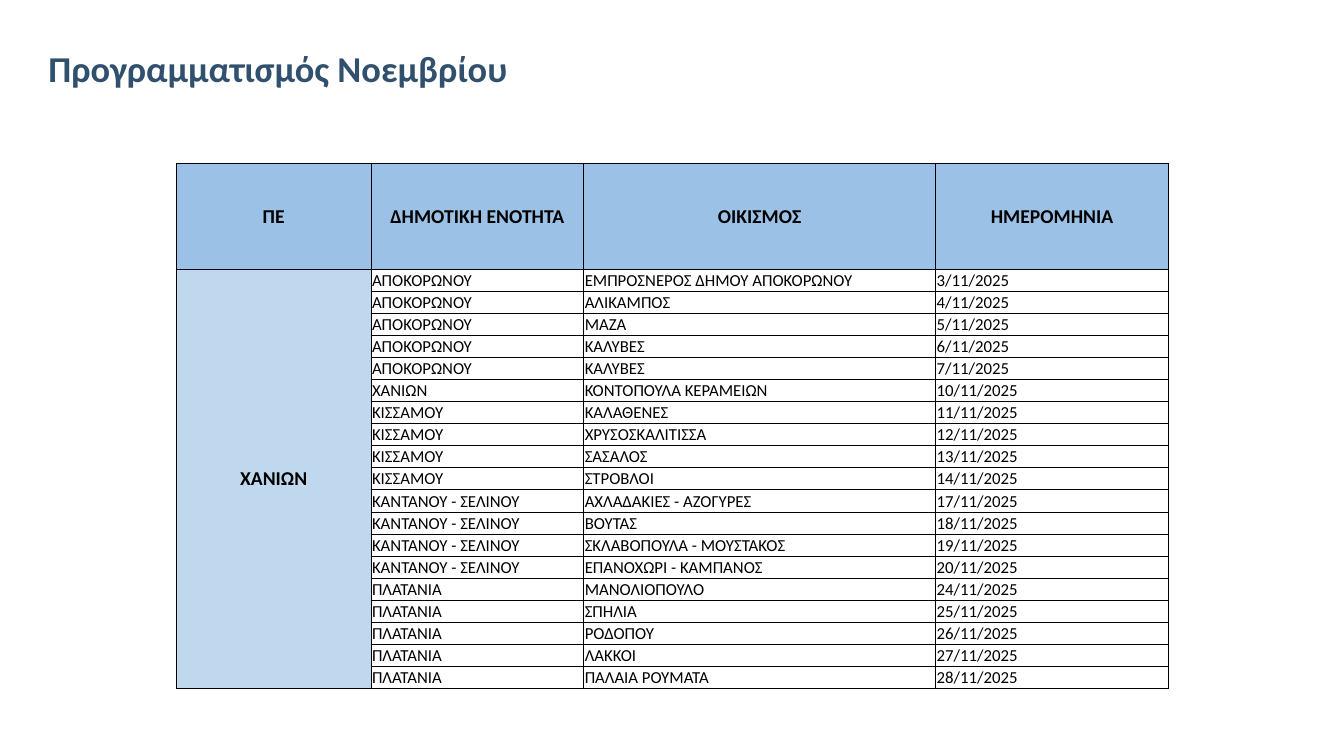
from lxml import etree
from pptx import Presentation
from pptx import util as u
from pptx.dml.color import RGBColor
from pptx.enum import text
from pptx.oxml import ns

TITLE = "Προγραμματισμός Νοεμβρίου"
HEADERS = ("ΠΕ", "ΔΗΜΟΤΙΚΗ ΕΝΟΤΗΤΑ", "ΟΙΚΙΣΜΟΣ", "ΗΜΕΡΟΜΗΝΙΑ")
REGION = "ΧΑΝΙΩΝ"
VISITS = {
    "ΑΠΟΚΟΡΩΝΟΥ": (
        ("ΕΜΠΡΟΣΝΕΡΟΣ ΔΗΜΟΥ ΑΠΟΚΟΡΩΝΟΥ", 3),
        ("ΑΛΙΚΑΜΠΟΣ", 4),
        ("ΜΑΖΑ", 5),
        ("ΚΑΛΥΒΕΣ", 6),
        ("ΚΑΛΥΒΕΣ", 7),
    ),
    "ΧΑΝΙΩΝ": (("ΚΟΝΤΟΠΟΥΛΑ ΚΕΡΑΜΕΙΩΝ", 10),),
    "ΚΙΣΣΑΜΟΥ": (
        ("ΚΑΛΑΘΕΝΕΣ", 11),
        ("ΧΡΥΣΟΣΚΑΛΙΤΙΣΣΑ", 12),
        ("ΣΑΣΑΛΟΣ", 13),
        ("ΣΤΡΟΒΛΟΙ", 14),
    ),
    "ΚΑΝΤΑΝΟΥ - ΣΕΛΙΝΟΥ": (
        ("ΑΧΛΑΔΑΚΙΕΣ - ΑΖΟΓΥΡΕΣ", 17),
        ("ΒΟΥΤΑΣ", 18),
        ("ΣΚΛΑΒΟΠΟΥΛΑ - ΜΟΥΣΤΑΚΟΣ", 19),
        ("ΕΠΑΝΟΧΩΡΙ - ΚΑΜΠΑΝΟΣ", 20),
    ),
    "ΠΛΑΤΑΝΙΑ": (
        ("ΜΑΝΟΛΙΟΠΟΥΛΟ", 24),
        ("ΣΠΗΛΙΑ", 25),
        ("ΡΟΔΟΠΟΥ", 26),
        ("ΛΑΚΚΟΙ", 27),
        ("ΠΑΛΑΙΑ ΡΟΥΜΑΤΑ", 28),
    ),
}

FONT = "Calibri"
BLACK = RGBColor(0x00, 0x00, 0x00)
NAVY = RGBColor(0x31, 0x50, 0x6D)
HEADER_BLUE = RGBColor(0x9B, 0xC2, 0xE6)
REGION_BLUE = RGBColor(0xC0, 0xD8, 0xED)

COLUMNS = (1.93, 2.11, 3.49, 2.31)
TABLE_LEFT, TABLE_TOP, TABLE_HEIGHT = 1.75, 1.62, 5.21
HEADER_HEIGHT = 1.05


def style_font(p, size, color, bold):
    p.font.name = FONT
    p.font.size = u.Pt(size)
    p.font.bold = bold
    p.font.color.rgb = color


def add_borders(cell):
    tc_pr = cell._tc.get_or_add_tcPr()
    for side in ("lnL", "lnR", "lnT", "lnB"):
        ln = etree.SubElement(tc_pr, ns.qn(f"a:{side}"), w=str(u.Pt(0.5)))
        fill = etree.SubElement(ln, ns.qn("a:solidFill"))
        etree.SubElement(fill, ns.qn("a:srgbClr"), val=str(BLACK))


def style_cell(cell, value, fill):
    add_borders(cell)
    cell.vertical_anchor = text.MSO_ANCHOR.MIDDLE
    cell.margin_left = cell.margin_right = cell.margin_top = u.Inches(0.01)
    cell.margin_bottom = 0
    if fill is None:
        cell.fill.background()
    else:
        cell.fill.solid()
        cell.fill.fore_color.rgb = fill
    cell.text = value
    p = cell.text_frame.paragraphs[0]
    p.alignment = text.PP_ALIGN.CENTER if fill else text.PP_ALIGN.LEFT
    style_font(p, 14 if fill else 12, BLACK, fill is not None)


def add_title(slide):
    box = slide.shapes.add_textbox(*map(u.Inches, (0.36, 0.25, 12.4, 0.7)))
    tf = box.text_frame
    tf.word_wrap = True
    tf.vertical_anchor = text.MSO_ANCHOR.BOTTOM
    tf.margin_left = u.Inches(0.12)
    p = tf.paragraphs[0]
    p.text = TITLE
    p.line_spacing = 0.9
    style_font(p, 26, NAVY, True)


def add_schedule(slide):
    visits = [(unit, place, f"{day}/11/2025")
              for unit, stops in VISITS.items() for place, day in stops]
    rows = [HEADERS] + [(REGION if i == 0 else "", *visit)
                        for i, visit in enumerate(visits)]
    frame = slide.shapes.add_table(
        len(rows), len(COLUMNS), u.Inches(TABLE_LEFT), u.Inches(TABLE_TOP),
        u.Inches(sum(COLUMNS)), u.Inches(TABLE_HEIGHT))
    table = frame.table
    table.first_row = table.horz_banding = False
    for column, width in zip(table.columns, COLUMNS):
        column.width = u.Inches(width)
    row_height = (TABLE_HEIGHT - HEADER_HEIGHT) / len(visits)
    for r, values in enumerate(rows):
        table.rows[r].height = u.Inches(row_height if r else HEADER_HEIGHT)
        for c, value in enumerate(values):
            fill = HEADER_BLUE if r == 0 else REGION_BLUE if c == 0 else None
            style_cell(table.cell(r, c), value, fill)
    table.cell(1, 0).merge(table.cell(len(visits), 0))


def main():
    prs = Presentation()
    prs.slide_width, prs.slide_height = u.Inches(13.33), u.Inches(7.5)
    slide = prs.slides.add_slide(prs.slide_layouts[6])
    add_title(slide)
    add_schedule(slide)
    prs.save("out.pptx")


if __name__ == "__main__":
    main()
